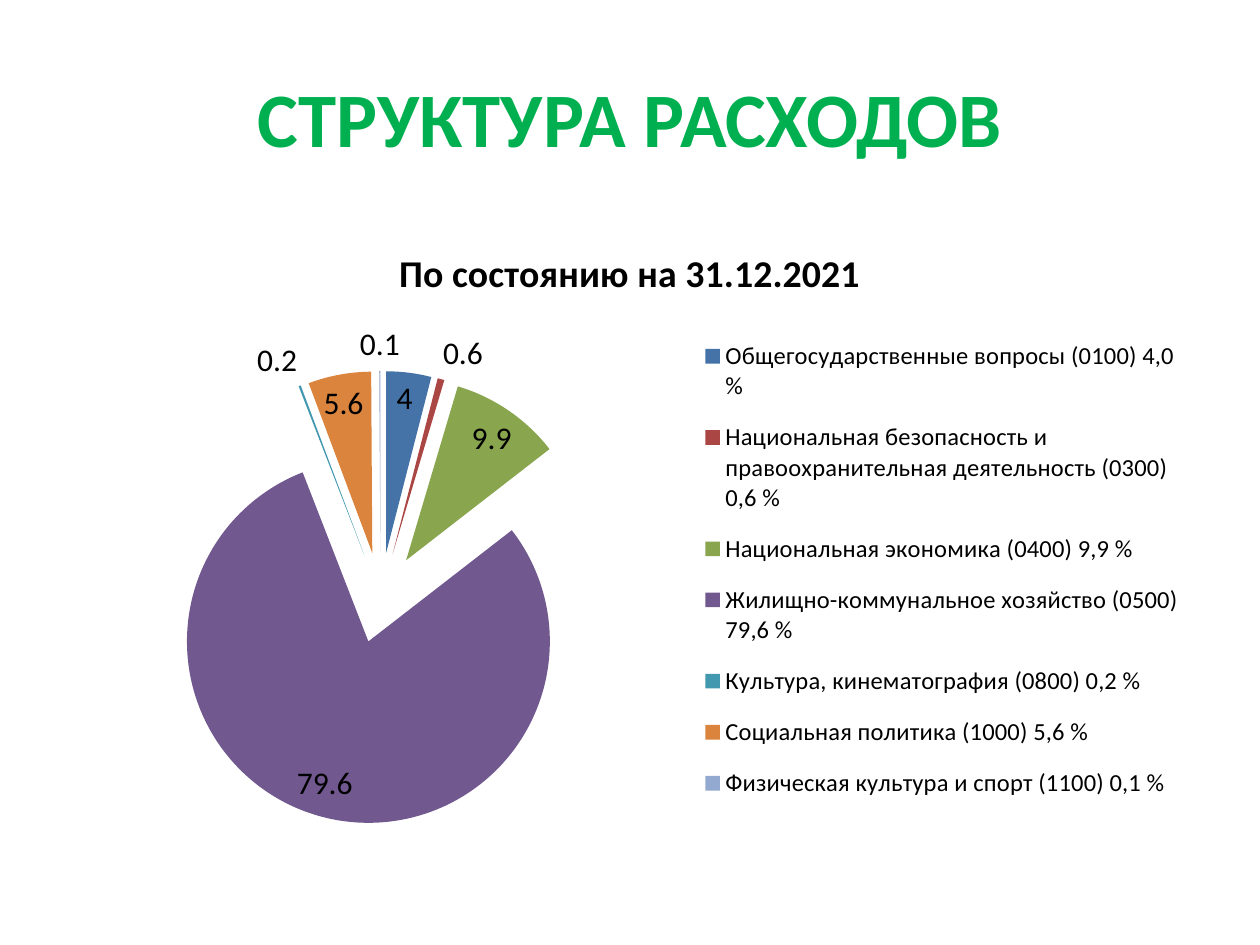
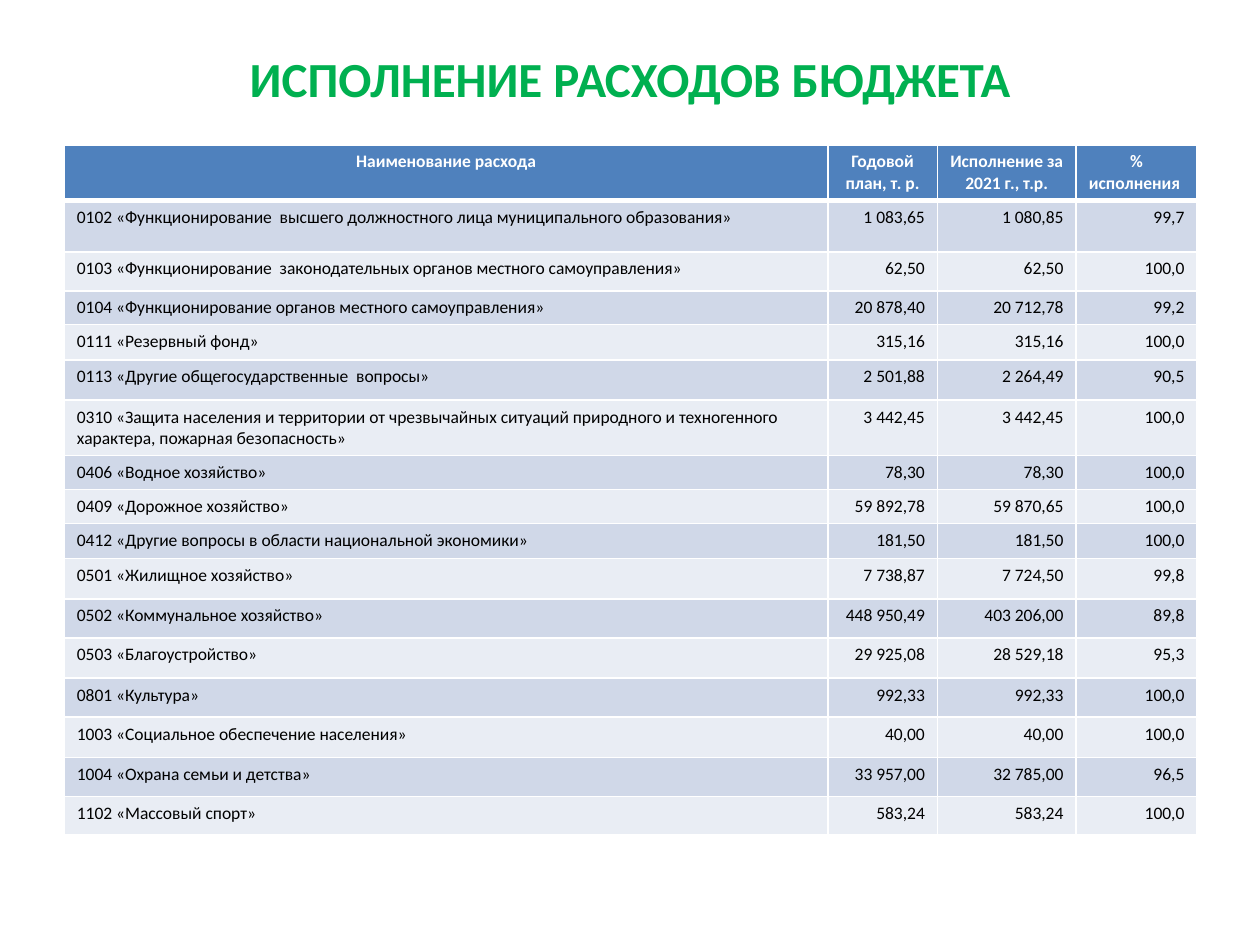
from dataclasses import dataclass

from lxml import etree
from pptx import Presentation
from pptx.chart.data import CategoryChartData
from pptx.dml.color import RGBColor
from pptx.enum.chart import XL_CHART_TYPE, XL_LABEL_POSITION, XL_LEGEND_POSITION
from pptx.enum.text import MSO_ANCHOR, PP_ALIGN
from pptx.oxml.ns import qn
from pptx.util import Inches, Pt

LEFT, CENTER, RIGHT = PP_ALIGN.LEFT, PP_ALIGN.CENTER, PP_ALIGN.RIGHT
MIDDLE = MSO_ANCHOR.MIDDLE
PIE = XL_CHART_TYPE.PIE
BEST_FIT = XL_LABEL_POSITION.BEST_FIT
LEGEND_RIGHT = XL_LEGEND_POSITION.RIGHT


@dataclass(frozen=True)
class Theme:
    font: str = "Calibri"
    title: str = "00B050"
    text: str = "000000"
    white: str = "FFFFFF"
    header: str = "4F81BD"
    bands: tuple = ("D0D8E8", "E9EDF4")
    label_size: float = 18
    chart_title_size: float = 21.6
    legend_size: float = 14
    table_size: float = 10
    thin_border: float = 1
    thick_border: float = 3


@dataclass(frozen=True)
class Box:
    left: float
    top: float
    width: float
    height: float

    def lengths(self) -> tuple:
        return tuple(map(Inches, (self.left, self.top, self.width, self.height)))


@dataclass(frozen=True)
class Sector:
    name: str
    percent: float
    color: str


@dataclass(frozen=True)
class Expense:
    height: float
    name: str
    plan: str
    actual: str
    percent: str


THEME = Theme()
CHART_TITLE = "По состоянию на 31.12.2021"
EXPLOSION = 25

# Parts of the chart as fractions of its frame
PIE_AREA = Box(0.08, 0.24, 0.4, 0.73)
LEGEND_AREA = Box(0.56, 0.16, 0.43, 0.8)

SECTORS = [
    Sector("Общегосударственные вопросы (0100) 4,0 %", 4, "4572A7"),
    Sector("Национальная безопасность и правоохранительная деятельность (0300) 0,6 %",
           0.6, "AA4643"),
    Sector("Национальная экономика (0400) 9,9 %", 9.9, "89A54E"),
    Sector("Жилищно-коммунальное хозяйство (0500) 79,6 %", 79.6, "71588F"),
    Sector("Культура, кинематография (0800) 0,2 %", 0.2, "4198AF"),
    Sector("Социальная политика (1000) 5,6 %", 5.6, "DB843D"),
    Sector("Физическая культура и спорт (1100) 0,1 %", 0.1, "93A9CF"),
]

COLUMN_WIDTHS = (6.06, 0.87, 1.1, 0.96)
HEADER = Expense(0.44, "Наименование расхода", "Годовой план, т. р.",
                 "Исполнение за 2021 г., т.р.", "% исполнения ")
EXPENSES = [
    Expense(0.41, "0102 «Функционирование  высшего должностного лица муниципального образования»",
            "1 083,65", "1 080,85", "99,7"),
    Expense(0.31, "0103 «Функционирование  законодательных органов местного самоуправления»",
            "62,50", "62,50", "100,0"),
    Expense(0.24, "0104 «Функционирование органов местного самоуправления»",
            "20 878,40", "20 712,78", "99,2"),
    Expense(0.28, "0111 «Резервный фонд»", "315,16", "315,16", "100,0"),
    Expense(0.32, "0113 «Другие общегосударственные  вопросы»",
            "2 501,88", "2 264,49", "90,5"),
    Expense(0.44, "0310 «Защита населения и территории от чрезвычайных ситуаций природного "
            "и техногенного характера, пожарная безопасность»",
            "3 442,45", "3 442,45", "100,0"),
    Expense(0.27, "0406 «Водное хозяйство»", "78,30", "78,30", "100,0"),
    Expense(0.24, "0409 «Дорожное хозяйство»", "59 892,78", "59 870,65", "100,0"),
    Expense(0.28, "0412 «Другие вопросы в области национальной экономики»",
            "181,50", "181,50", "100,0"),
    Expense(0.32, "0501 «Жилищное хозяйство»", "7 738,87", "7 724,50", "99,8"),
    Expense(0.31, "0502 «Коммунальное хозяйство»", "448 950,49", "403 206,00", "89,8"),
    Expense(0.32, "0503 «Благоустройство»", "29 925,08", "28 529,18", "95,3"),
    Expense(0.31, "0801 «Культура»", "992,33", "992,33", "100,0"),
    Expense(0.32, "1003 «Социальное обеспечение населения»", "40,00", "40,00", "100,0"),
    Expense(0.31, "1004 «Охрана семьи и детства»", "33 957,00", "32 785,00", "96,5"),
    Expense(0.3, "1102 «Массовый спорт»", "583,24", "583,24", "100,0"),
]


def style_font(font, size: float, color: str, bold: bool = False) -> None:
    font.name = THEME.font
    font.size = Pt(size)
    font.bold = bold
    font.color.rgb = RGBColor.from_string(color)


def add_title(slide, text: str, box: Box, size: float) -> None:
    frame = slide.shapes.add_textbox(*box.lengths()).text_frame
    frame.word_wrap = True
    frame.vertical_anchor = MIDDLE
    paragraph = frame.paragraphs[0]
    paragraph.text = text
    paragraph.alignment = CENTER
    style_font(paragraph.font, size, THEME.title, bold=True)


def make_layout(area: Box, inner: bool = False):
    layout = etree.Element(qn("c:layout"))
    manual = etree.SubElement(layout, qn("c:manualLayout"))
    settings = {"c:layoutTarget": "inner"} if inner else {}
    settings |= {"c:xMode": "edge", "c:yMode": "edge", "c:x": area.left,
                 "c:y": area.top, "c:w": area.width, "c:h": area.height}
    for tag, value in settings.items():
        etree.SubElement(manual, qn(tag), val=str(value))
    return layout


def place_chart_parts(chart) -> None:
    plot_area = chart._chartSpace.chart.plotArea
    legend = chart.legend._element
    for element in (plot_area, legend):
        for layout in element.findall(qn("c:layout")):
            element.remove(layout)
    plot_area.insert(0, make_layout(PIE_AREA, inner=True))
    legend.find(qn("c:legendPos")).addnext(make_layout(LEGEND_AREA))


def add_expense_pie(slide, box: Box) -> None:
    data = CategoryChartData()
    data.categories = [sector.name for sector in SECTORS]
    data.add_series(CHART_TITLE, [sector.percent for sector in SECTORS])
    chart = slide.shapes.add_chart(PIE, *box.lengths(), data).chart
    style_font(chart.font, THEME.label_size, THEME.text)

    # Chart title and legend
    chart.has_title = True
    paragraph = chart.chart_title.text_frame.paragraphs[0]
    paragraph.text = CHART_TITLE
    style_font(paragraph.font, THEME.chart_title_size, THEME.text, bold=True)
    chart.has_legend = True
    chart.legend.position = LEGEND_RIGHT
    chart.legend.include_in_layout = False
    style_font(chart.legend.font, THEME.legend_size, THEME.text)
    place_chart_parts(chart)

    # Sectors, pulled apart, with their values
    plot = chart.plots[0]
    plot.vary_by_categories = True
    series = plot.series[0]
    explosion = etree.Element(qn("c:explosion"), val=str(EXPLOSION))
    series._element.find(qn("c:tx")).addnext(explosion)
    for index, sector in enumerate(SECTORS):
        fill = series.points[index].format.fill
        fill.solid()
        fill.fore_color.rgb = RGBColor.from_string(sector.color)
    plot.has_data_labels = True
    labels = plot.data_labels
    labels.show_value = True
    labels.show_percentage = False
    labels.position = BEST_FIT
    style_font(labels.font, THEME.label_size, THEME.text)


def set_borders(cell, top: float, bottom: float) -> None:
    properties = cell._tc.get_or_add_tcPr()
    widths = {"a:lnL": THEME.thin_border, "a:lnR": THEME.thin_border,
              "a:lnT": top, "a:lnB": bottom}
    for position, (tag, width) in enumerate(widths.items()):
        line = etree.Element(qn(tag), w=str(Pt(width)))
        fill = etree.SubElement(line, qn("a:solidFill"))
        etree.SubElement(fill, qn("a:srgbClr"), val=THEME.white)
        properties.insert(position, line)


def fill_cell(cell, text: str, row: int, column: int) -> None:
    is_header = row == 0
    cell.fill.solid()
    cell.fill.fore_color.rgb = RGBColor.from_string(
        THEME.header if is_header else THEME.bands[(row - 1) % 2])
    set_borders(cell,
                top=THEME.thick_border if row == 1 else THEME.thin_border,
                bottom=THEME.thick_border if is_header else THEME.thin_border)
    paragraph = cell.text_frame.paragraphs[0]
    paragraph.text = text
    paragraph.alignment = CENTER if is_header else RIGHT if column else LEFT
    style_font(paragraph.font, THEME.table_size,
               THEME.white if is_header else THEME.text, bold=is_header)


def add_expense_table(slide, box: Box) -> None:
    rows = [HEADER, *EXPENSES]
    table = slide.shapes.add_table(len(rows), len(COLUMN_WIDTHS), *box.lengths()).table
    for column, width in zip(table.columns, COLUMN_WIDTHS):
        column.width = Inches(width)
    for row, expense in enumerate(rows):
        table.rows[row].height = Inches(expense.height)
        texts = (expense.name, expense.plan, expense.actual, expense.percent)
        for column, text in enumerate(texts):
            fill_cell(table.cell(row, column), text, row, column)


def main() -> None:
    presentation = Presentation()
    presentation.slide_width = Inches(10)
    presentation.slide_height = Inches(7.5)
    blank = presentation.slide_layouts[6]

    # Structure of expenses
    slide = presentation.slides.add_slide(blank)
    add_title(slide, "СТРУКТУРА РАСХОДОВ", Box(0.5, 0.3, 9, 1.25), 44)
    add_expense_pie(slide, Box(0.5, 1.75, 9, 4.95))

    # Execution of the budget
    slide = presentation.slides.add_slide(blank)
    add_title(slide, "ИСПОЛНЕНИЕ РАСХОДОВ БЮДЖЕТА", Box(0.5, 0.31, 9, 0.61), 28)
    add_expense_table(slide, Box(0.51, 1.15, 8.99, 5.47))

    presentation.save("out.pptx")


if __name__ == "__main__":
    main()
